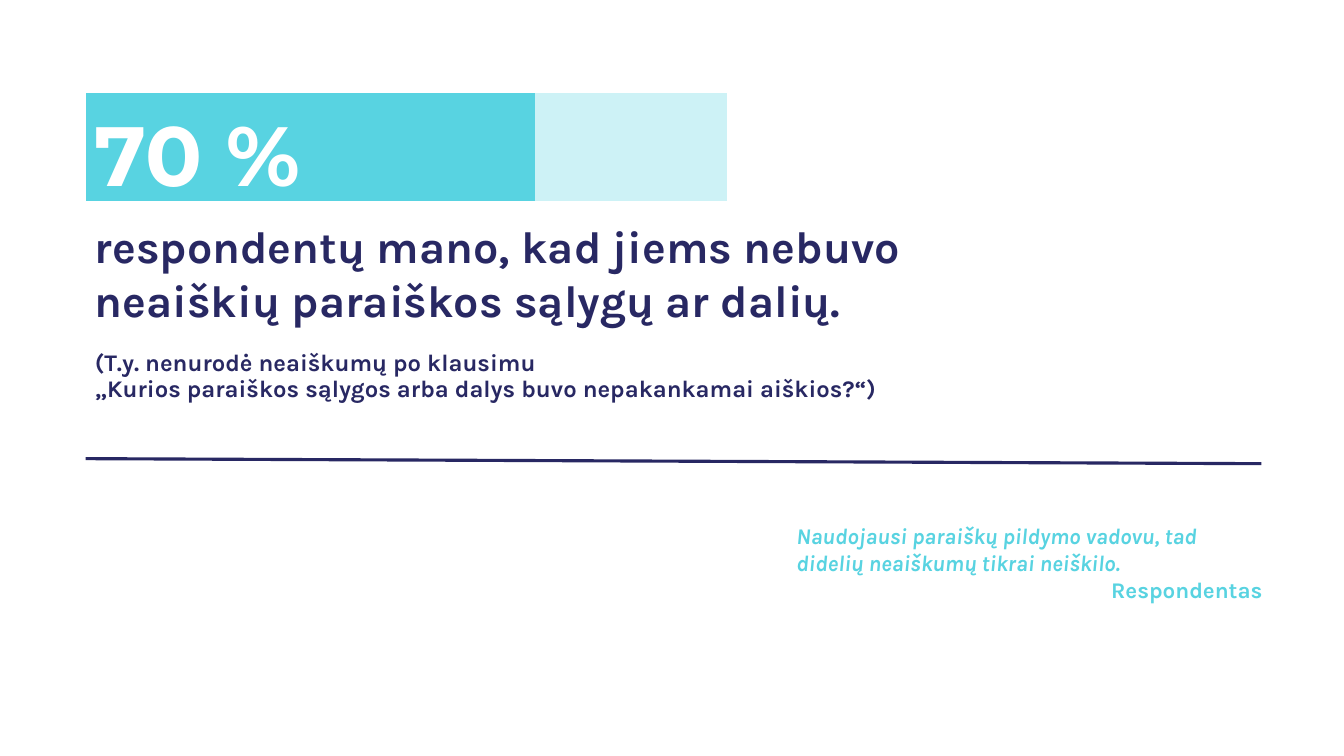
from dataclasses import dataclass

from lxml import etree
from pptx import Presentation
from pptx.chart.data import CategoryChartData
from pptx.dml.color import RGBColor
from pptx.enum.chart import XL_CHART_TYPE
from pptx.enum.shapes import MSO_CONNECTOR
from pptx.enum.text import MSO_ANCHOR, MSO_AUTO_SIZE, PP_ALIGN
from pptx.oxml import parse_xml
from pptx.oxml.ns import nsdecls, qn
from pptx.util import Inches, Pt


@dataclass(frozen=True)
class Theme:
    navy: str = "282863"
    aqua: str = "58D3E1"
    pale: str = "CDF2F6"
    white: str = "FFFFFF"
    text_font: str = "Karla"
    number_font: str = "Montserrat"
    chart_font: str = "Calibri"
    number: int = 60
    headline: int = 32
    note: int = 17
    quote: int = 16
    chart: int = 10


THEME = Theme()


def rgb(value):
    return RGBColor.from_string(value)


def write(p, text, size, color, font=THEME.text_font, italic=False,
          align=PP_ALIGN.LEFT, line=1.0, before=0):
    """Fill one paragraph with a bold run in the given format."""
    p.alignment = align
    p.line_spacing = line
    p.space_before = Pt(before)
    r = p.add_run()
    r.text = text
    r.font.name = font
    r.font.size = Pt(size)
    r.font.bold = True
    r.font.italic = italic
    r.font.color.rgb = rgb(color)


def place(sp, left, top, width, height):
    sp.left, sp.top = Inches(left), Inches(top)
    sp.width, sp.height = Inches(width), Inches(height)


def remove_bullet(p, indent):
    pPr = p._p.get_or_add_pPr()
    pPr.set("marL", str(Inches(indent)))
    pPr.set("indent", "0")
    etree.SubElement(pPr, qn("a:buNone"))


def set_plot_layout(chart, x, y, w, h):
    """Fix the inner plot area, as fractions of the chart frame."""
    plot_area = chart._chartSpace.chart.plotArea
    for old in plot_area.findall(qn("c:layout")):
        plot_area.remove(old)
    plot_area.insert(0, parse_xml(
        f'<c:layout {nsdecls("c")}><c:manualLayout>'
        '<c:layoutTarget val="inner"/><c:xMode val="edge"/><c:yMode val="edge"/>'
        f'<c:x val="{x}"/><c:y val="{y}"/><c:w val="{w}"/><c:h val="{h}"/>'
        '</c:manualLayout></c:layout>'))


def add_share_bar(s, share):
    data = CategoryChartData()
    data.categories = ["1"]
    data.add_series("Series 1", [share])
    data.add_series("Series 2", [100 - share])
    chart = s.shapes.add_chart(
        XL_CHART_TYPE.BAR_STACKED_100, Inches(0.85), Inches(-0.07),
        Inches(6.7), Inches(3), data).chart
    chart.has_legend = False
    chart.has_title = False
    chart.font.name = THEME.chart_font
    chart.font.size = Pt(THEME.chart)
    chart.font.color.rgb = rgb("000000")
    chart.value_axis.has_major_gridlines = False
    for axis in (chart.category_axis, chart.value_axis):
        axis.visible = False
    plot = chart.plots[0]
    plot.gap_width, plot.overlap = 150, 100
    plot.vary_by_categories = False
    for series, color in zip(plot.series, (THEME.aqua, THEME.pale)):
        series.format.fill.solid()
        series.format.fill.fore_color.rgb = rgb(color)
    set_plot_layout(chart, 0, 0.06, 0.95, 0.9)


def add_divider(s):
    line = s.shapes.add_connector(
        MSO_CONNECTOR.STRAIGHT,
        Inches(0.85), Inches(4.55), Inches(12.51), Inches(4.6))
    line.line.color.rgb = rgb(THEME.navy)
    line.line.width = Pt(2.25)
    etree.SubElement(line._element.spPr, qn("a:effectLst"))


def fill_finding(s, body):
    place(body, 0.64, 1.08, 10.24, 3.23)
    s.shapes._spTree.append(body._element)  # bring in front of the bar
    tf = body.text_frame
    tf.word_wrap = True
    tf.auto_size = MSO_AUTO_SIZE.NONE
    tf.vertical_anchor = MSO_ANCHOR.TOP
    note = dict(size=THEME.note, color=THEME.navy, line=0.9)
    paragraphs = (
        ("70 %", dict(size=THEME.number, color=THEME.white,
                      font=THEME.number_font, line=0.9, before=10)),
        ("respondentų mano, kad jiems nebuvo neaiškių paraiškos sąlygų ar dalių.",
         dict(size=THEME.headline, color=THEME.navy, before=10)),
        ("(T.y. nenurodė neaiškumų po klausimu", dict(note, before=18)),
        ("„Kurios paraiškos sąlygos arba dalys buvo nepakankamai aiškios?“)", note),
    )
    for i, (text, style) in enumerate(paragraphs):
        p = tf.add_paragraph() if i else tf.paragraphs[0]
        write(p, text, **style)
        remove_bullet(p, 0.2)


def add_quote(s):
    tf = s.shapes.add_textbox(
        Inches(7.8), Inches(5.13), Inches(4.82), Inches(0.91)).text_frame
    tf.word_wrap = True
    write(tf.paragraphs[0],
          "Naudojausi paraiškų pildymo vadovu, tad didelių neaiškumų tikrai neiškilo.",
          THEME.quote, THEME.aqua, italic=True)
    write(tf.add_paragraph(), "Respondentas", THEME.quote, THEME.aqua,
          align=PP_ALIGN.RIGHT)


def main():
    prs = Presentation()
    prs.slide_width, prs.slide_height = Inches(13.33), Inches(7.5)
    s = prs.slides.add_slide(prs.slide_layouts[1])
    title, body = s.placeholders
    title._element.getparent().remove(title._element)
    add_quote(s)
    add_divider(s)
    add_share_bar(s, 70)
    fill_finding(s, body)
    prs.save("out.pptx")


if __name__ == "__main__":
    main()
